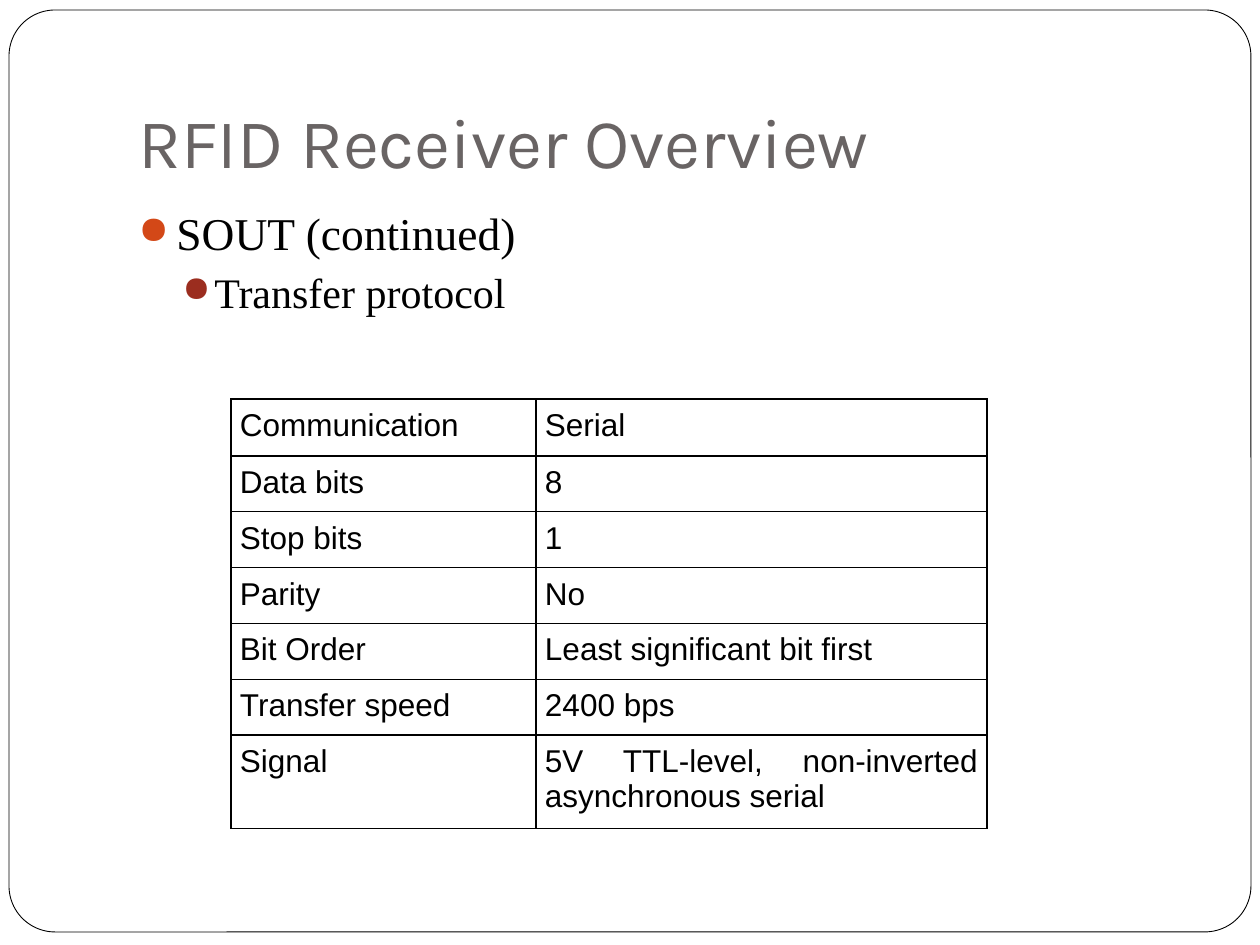
from dataclasses import dataclass

import pptx
import pptx.dml.color
import pptx.enum.shapes
import pptx.enum.text
import pptx.oxml.ns
import pptx.util
from lxml import etree

PX_PER_INCH = 126


@dataclass(frozen=True)
class Theme:
    white: str = "FFFFFF"
    black: str = "000000"
    title: str = "696464"
    bullet_main: str = "D34817"
    bullet_sub: str = "9B2D1F"
    title_font: str = "Karla"
    body_font: str = "Times New Roman"
    table_font: str = "Arial"
    title_size: int = 40
    main_size: int = 26
    sub_size: int = 24
    table_size: int = 18
    frame_line: float = 0.5
    table_line: float = 0.75


@dataclass(frozen=True)
class Bullet:
    text: str
    level: int
    size: int
    color: str
    left: int
    hang: int
    before: float


THEME = Theme()
BULLETS = [
    Bullet("SOUT (continued)", 0, THEME.main_size, THEME.bullet_main, 38, 38, 5.8),
    Bullet("Transfer protocol", 1, THEME.sub_size, THEME.bullet_sub, 76, 32, 3.7),
]
PROTOCOL = [
    ("Communication", "Serial"),
    ("Data bits", "8"),
    ("Stop bits", "1"),
    ("Parity", "No"),
    ("Bit Order", "Least significant bit first"),
    ("Transfer speed", "2400 bps"),
    ("Signal", "5V TTL-level, non-inverted asynchronous serial"),
]
COLUMN_WIDTHS = [305, 451]
ROW_HEIGHTS = [57] + [53] * 5 + [89]
CELL_INSET = 9


def px(n: int) -> pptx.util.Emu:
    return pptx.util.Emu(round(n * 914400 / PX_PER_INCH))


def rgb(color: str) -> pptx.dml.color.RGBColor:
    return pptx.dml.color.RGBColor.from_string(color)


def add_xml(parent, tag: str, **attrs: str):
    return etree.SubElement(parent, pptx.oxml.ns.qn(tag), attrs)


def set_font(p, name: str, size: int, color: str) -> None:
    p.font.name = name
    p.font.size = pptx.util.Pt(size)
    p.font.color.rgb = rgb(color)


def add_frame(s) -> None:
    sp = s.shapes.add_shape(
        pptx.enum.shapes.MSO_SHAPE.ROUNDED_RECTANGLE, px(9), px(10), px(1242), px(922)
    )
    sp.adjustments[0] = 0.05
    sp.shadow.inherit = False
    sp.fill.solid()
    sp.fill.fore_color.rgb = rgb(THEME.white)
    sp.line.color.rgb = rgb(THEME.black)
    sp.line.width = pptx.util.Pt(THEME.frame_line)


def add_text_frame(s, left: int, top: int, width: int, height: int):
    tf = s.shapes.add_textbox(px(left), px(top), px(width), px(height)).text_frame
    tf.word_wrap = True
    return tf


def add_title(s, text: str) -> None:
    tf = add_text_frame(s, 126, 38, 1071, 157)
    tf.vertical_anchor = pptx.enum.text.MSO_ANCHOR.BOTTOM
    tf.margin_bottom = px(13)
    p = tf.paragraphs[0]
    p.text = text
    set_font(p, THEME.title_font, THEME.title_size, THEME.title)


def add_bullets(s, bullets: list[Bullet]) -> None:
    tf = add_text_frame(s, 126, 199, 1071, 630)
    for i, bullet in enumerate(bullets):
        p = tf.add_paragraph() if i else tf.paragraphs[0]
        p.text = bullet.text
        p.level = bullet.level
        pPr = p._p.get_or_add_pPr()
        pPr.set("marL", str(px(bullet.left)))
        pPr.set("indent", str(-px(bullet.hang)))
        add_xml(add_xml(pPr, "a:buClr"), "a:srgbClr", val=bullet.color)
        add_xml(pPr, "a:buSzPct", val="85000")
        add_xml(pPr, "a:buChar", char="●")
        p.space_before = pptx.util.Pt(bullet.before)
        set_font(p, THEME.body_font, bullet.size, THEME.black)


def add_borders(cell) -> None:
    tcPr = cell._tc.get_or_add_tcPr()
    for side in ("a:lnL", "a:lnR", "a:lnT", "a:lnB"):
        ln = add_xml(tcPr, side, w=str(pptx.util.Pt(THEME.table_line)))
        add_xml(add_xml(ln, "a:solidFill"), "a:srgbClr", val=THEME.black)


def fill_cell(cell, text: str) -> None:
    add_borders(cell)
    cell.fill.background()
    cell.margin_left = cell.margin_right = px(CELL_INSET)
    cell.margin_top = cell.margin_bottom = px(CELL_INSET)
    p = cell.text_frame.paragraphs[0]
    p.text = text
    p.alignment = pptx.enum.text.PP_ALIGN.JUSTIFY
    set_font(p, THEME.table_font, THEME.table_size, THEME.black)


def add_protocol_table(s, rows: list[tuple[str, str]]) -> None:
    table = s.shapes.add_table(
        len(rows), len(COLUMN_WIDTHS), px(231), px(399),
        px(sum(COLUMN_WIDTHS)), px(sum(ROW_HEIGHTS)),
    ).table
    table.first_row = table.horz_banding = False
    for column, width in zip(table.columns, COLUMN_WIDTHS):
        column.width = px(width)
    for row, height, texts in zip(table.rows, ROW_HEIGHTS, rows):
        row.height = px(height)
        for cell, text in zip(row.cells, texts):
            fill_cell(cell, text)


def main() -> None:
    prs = pptx.Presentation()
    prs.slide_width, prs.slide_height = px(1260), px(945)
    s = prs.slides.add_slide(prs.slide_layouts[6])
    add_frame(s)
    add_title(s, "RFID Receiver Overview")
    add_bullets(s, BULLETS)
    add_protocol_table(s, PROTOCOL)
    prs.save("out.pptx")


if __name__ == "__main__":
    main()
